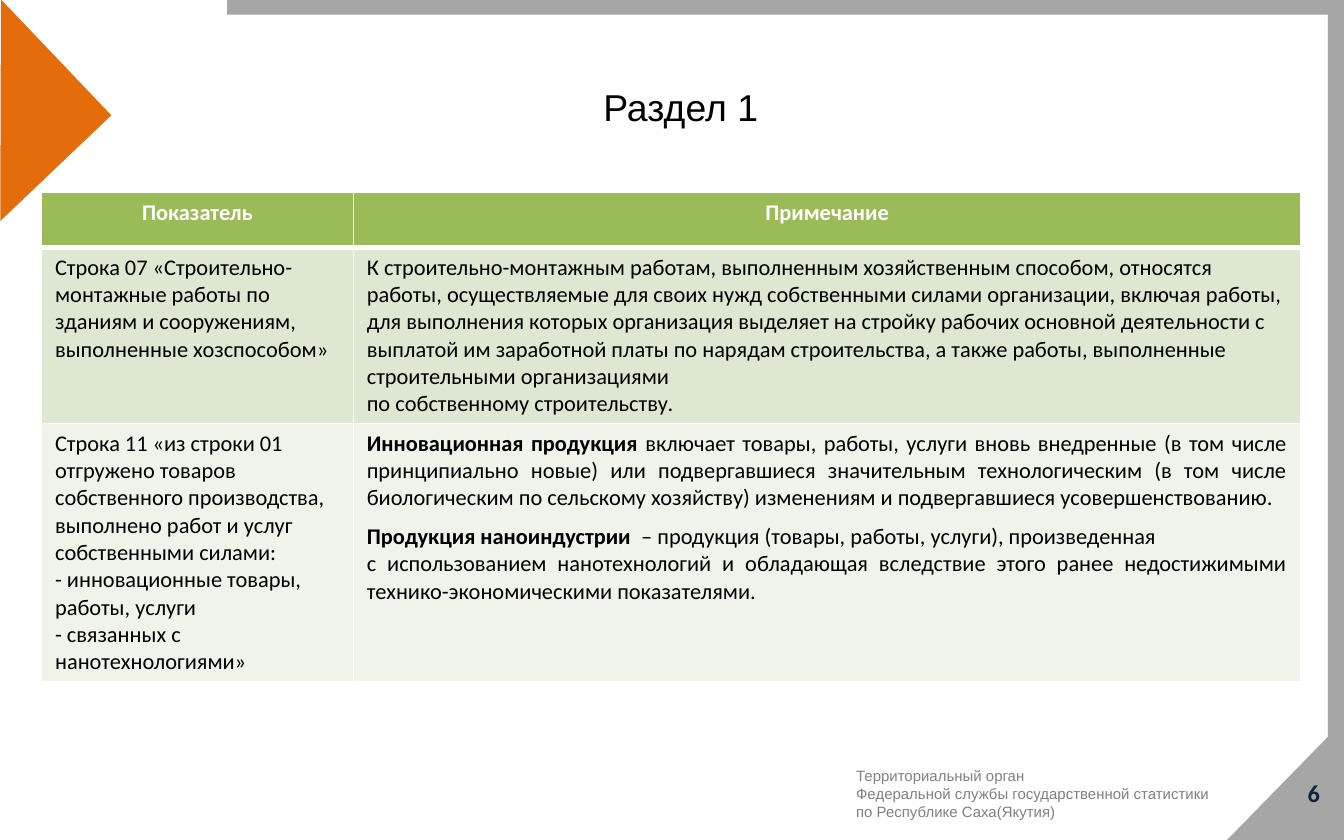
from typing import NamedTuple

from lxml.etree import SubElement
from pptx import Presentation
from pptx.dml.color import RGBColor
from pptx.enum.shapes import MSO_SHAPE
from pptx.enum.text import MSO_ANCHOR, PP_ALIGN
from pptx.oxml.ns import qn
from pptx.util import Inches, Pt

GREY, ORANGE, GREEN, WHITE, BLACK = "A6A6A6", "E46C0A", "9BBB59", "FFFFFF", "000000"
ROW_FILLS = [GREEN, "DEE7D1", "EFF3EA"]


class Box(NamedTuple):
    left: float
    top: float
    width: float
    height: float


class Decoration(NamedTuple):
    preset: MSO_SHAPE
    box: Box
    colour: str
    rotation: float = 0


class Style(NamedTuple):
    font: str
    size: float
    colour: str = BLACK
    bold: bool = False


class Para(NamedTuple):
    text: str
    align: PP_ALIGN = PP_ALIGN.LEFT
    term: str = ""  # bold opening words
    space_before: float = 0


DECORATIONS = [
    Decoration(MSO_SHAPE.RIGHT_TRIANGLE, Box(9.12, 5.37, 0.89, 0.87), GREY, 270),
    Decoration(MSO_SHAPE.RECTANGLE, Box(9.88, 0, 0.12, 5.55), GREY),
    Decoration(MSO_SHAPE.RECTANGLE, Box(1.69, 0, 8.19, 0.11), GREY),
    Decoration(MSO_SHAPE.RIGHT_TRIANGLE, Box(-0.59, 0.25, 1.19, 1.14), ORANGE, 226.4),
]

FOOTER = [
    Para("Территориальный орган"),
    Para("Федеральной службы государственной статистики"),
    Para("по Республике Саха(Якутия)"),
]

COLUMN_WIDTHS = [2.32, 7.05]
ROW_HEIGHTS = [0.41, 1.31, 1.92]
ROWS = [
    [
        [Para("Показатель", PP_ALIGN.CENTER)],
        [Para("Примечание", PP_ALIGN.CENTER)],
    ],
    [
        [Para("Строка 07 «Строительно-монтажные работы по зданиям и сооружениям, "
              "выполненные хозспособом»")],
        [
            Para("К строительно-монтажным работам, выполненным хозяйственным способом, "
                 "относятся работы, осуществляемые для своих нужд собственными силами "
                 "организации, включая работы, для выполнения которых организация выделяет "
                 "на стройку рабочих основной деятельности с выплатой им заработной платы "
                 "по нарядам строительства, а также работы, выполненные строительными "
                 "организациями"),
            Para("по собственному строительству."),
        ],
    ],
    [
        [
            Para("Строка 11 «из строки 01 отгружено товаров собственного производства, "
                 "выполнено работ и услуг собственными силами:"),
            Para("- инновационные товары, работы, услуги"),
            Para("- связанных с нанотехнологиями»"),
        ],
        [
            Para(" включает товары, работы, услуги вновь внедренные (в том числе "
                 "принципиально новые) или подвергавшиеся значительным технологическим "
                 "(в том числе биологическим по сельскому хозяйству) изменениям и "
                 "подвергавшиеся усовершенствованию.",
                 PP_ALIGN.JUSTIFY, "Инновационная продукция"),
            Para("  – продукция (товары, работы, услуги), произведенная ",
                 PP_ALIGN.JUSTIFY, "Продукция наноиндустрии", 6),
            Para("с использованием нанотехнологий и обладающая вследствие этого ранее "
                 "недостижимыми технико-экономическими показателями.", PP_ALIGN.JUSTIFY),
        ],
    ],
]


def rgb(colour: str) -> RGBColor:
    return RGBColor.from_string(colour)


def emu(box: Box) -> list[int]:
    return [Inches(length) for length in box]


def write(frame, paras: list[Para], style: Style) -> None:
    for index, para in enumerate(paras):
        paragraph = frame.add_paragraph() if index else frame.paragraphs[0]
        paragraph.alignment = para.align
        if para.space_before:
            paragraph.space_before = Pt(para.space_before)
        font = paragraph.font
        font.name, font.size, font.bold = style.font, Pt(style.size), style.bold
        font.color.rgb = rgb(style.colour)
        if para.term:
            term = paragraph.add_run()
            term.text = para.term
            term.font.bold = True
        paragraph.add_run().text = para.text


def add_decoration(slide, item: Decoration) -> None:
    shape = slide.shapes.add_shape(item.preset, *emu(item.box))
    shape.rotation = item.rotation
    shape.shadow.inherit = False
    shape.fill.solid()
    shape.fill.fore_color.rgb = rgb(item.colour)
    shape.line.fill.background()


def add_text(slide, box: Box, paras: list[Para], style: Style) -> None:
    frame = slide.shapes.add_textbox(*emu(box)).text_frame
    frame.word_wrap = True
    frame.vertical_anchor = MSO_ANCHOR.MIDDLE
    frame.margin_left = frame.margin_right = Inches(0.08)
    frame.margin_top = frame.margin_bottom = Inches(0.04)
    write(frame, paras, style)


def add_borders(cell, top: float, bottom: float) -> None:
    """White cell borders; the top and bottom widths are in points."""
    properties = cell._tc.get_or_add_tcPr()
    for side, width in {"L": 1, "R": 1, "T": top, "B": bottom}.items():
        line = SubElement(properties, qn(f"a:ln{side}"), w=str(Pt(width)))
        SubElement(SubElement(line, qn("a:solidFill")), qn("a:srgbClr"), val=WHITE)


def add_indicator_table(slide, left: float, top: float) -> None:
    box = Box(left, top, sum(COLUMN_WIDTHS), sum(ROW_HEIGHTS))
    table = slide.shapes.add_table(len(ROWS), len(COLUMN_WIDTHS), *emu(box)).table
    for column, width in zip(table.columns, COLUMN_WIDTHS):
        column.width = Inches(width)
    for index, (row, height, fill) in enumerate(zip(table.rows, ROW_HEIGHTS, ROW_FILLS)):
        row.height = Inches(height)
        header = index == 0
        style = Style("Calibri", 12, WHITE if header else BLACK, header)
        for cell, paras in zip(row.cells, ROWS[index]):
            add_borders(cell, top=3 if index == 1 else 1, bottom=3 if header else 1)
            cell.fill.solid()
            cell.fill.fore_color.rgb = rgb(fill)
            write(cell.text_frame, paras, style)


def main() -> None:
    presentation = Presentation()
    presentation.slide_width, presentation.slide_height = Inches(10), Inches(6.25)
    slide = presentation.slides.add_slide(presentation.slide_layouts[6])
    for item in DECORATIONS:
        add_decoration(slide, item)
    add_text(slide, Box(0.8, 0.56, 8.53, 0.46),
             [Para("Раздел 1", PP_ALIGN.CENTER)], Style("Arial", 20))
    add_text(slide, Box(6.29, 5.67, 3.71, 0.47), FOOTER, Style("Arial", 8, "808080"))
    add_text(slide, Box(9.49, 5.68, 0.41, 0.44),
             [Para("6", PP_ALIGN.RIGHT)], Style("Calibri", 13, "0F243E", True))
    add_indicator_table(slide, 0.31, 1.43)
    presentation.save("out.pptx")


if __name__ == "__main__":
    main()
